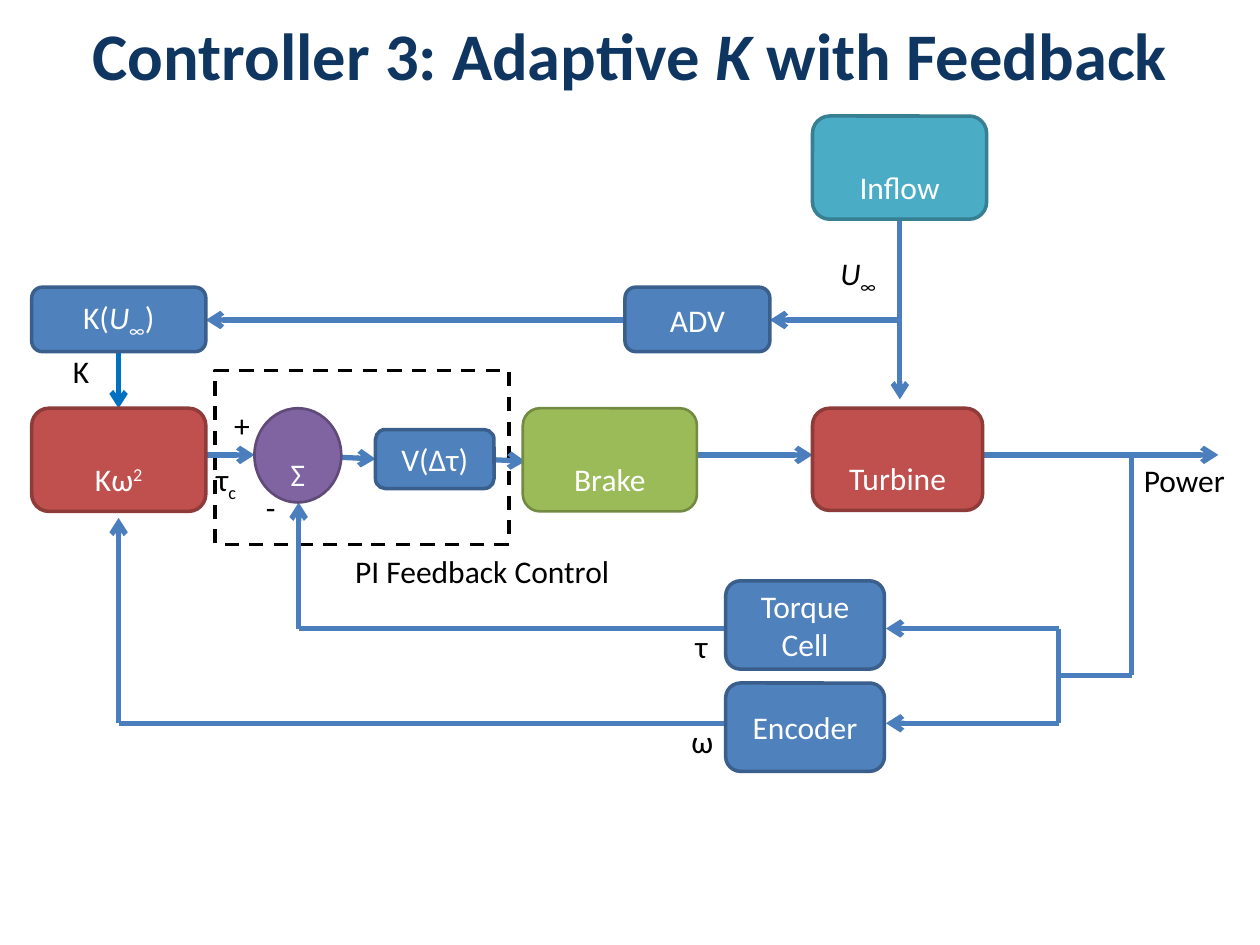
from pptx import Presentation
from pptx.util import Cm, Pt
from pptx.dml.color import RGBColor
from pptx.enum.dml import MSO_LINE
from pptx.enum.shapes import MSO_CONNECTOR, MSO_SHAPE
from pptx.enum.text import MSO_ANCHOR, MSO_AUTO_SIZE, PP_ALIGN
from lxml.etree import SubElement
from pptx.oxml.ns import qn

# Theme: name -> colour, (fill, edge, edge width) or type size
THEME = {
    "font": "Calibri", "big": 38, "text": 18, "wire": 3,
    "title": "0F3661", "ink": "000000", "paper": "FFFFFF",
    "line": "4B7EBC", "gain": "0070C0",
    "blue": ("4F81BD", "3A5F8C", 2), "red": ("C0504D", "8E3B39", 2),
    "green": ("9BBB59", "738A42", 1.5), "teal": ("4BACC6", "377F92", 2),
    "plum": ("8064A2", "5F4A78", 1.5),
}
SHIFT = {"sub": "-25000", "sup": "30000"}

# Content: text is a list of (words, style) runs; lengths are in cm
TITLE = [("Controller 3: Adaptive ", ""), ("K ", "i"), ("with Feedback", "")]
FRAME = (4.34, 7.47, 5.92, 3.51)

ROUND, OVAL = MSO_SHAPE.ROUNDED_RECTANGLE, MSO_SHAPE.OVAL
# text, left, top, width, height, look, line spacing, outline
BOXES = [
    ([("Inflow", "")], 16.38, 2.34, 3.51, 2.08, "teal", 2, ROUND),
    ([("K(", ""), ("U", "i"), ("∞", "sub"), (")", "")],
     0.64, 5.79, 3.51, 1.3, "blue", 1, ROUND),
    ([("ADV", "")], 12.6, 5.79, 2.92, 1.3, "blue", 1, ROUND),
    ([("Kω", ""), ("2", "sup")], 0.64, 8.23, 3.51, 2.08, "red", 2, ROUND),
    ([("Σ", "")], 5.13, 8.23, 1.75, 1.9, "plum", 2, OVAL),
    ([("V(Δτ)", "")], 7.57, 8.66, 2.39, 1.19, "blue", 1, ROUND),
    ([("Brake", "")], 10.54, 8.23, 3.51, 2.08, "green", 2, ROUND),
    ([("Turbine", "")], 16.38, 8.23, 3.43, 2.06, "red", 2, ROUND),
    ([("Torque Cell", "")], 14.63, 11.71, 3.2, 1.78, "blue", 1, ROUND),
    ([("Encoder", "")], 14.63, 13.77, 3.2, 1.78, "blue", 1, ROUND),
]

# text, left, top, width
LABELS = [
    ([("PI Feedback Control", "")], 6.91, 11, 5.72),
    ([("τ", ""), ("c", "sub")], 4.11, 9.19, 1.75),
    ([("τ", "")], 13.77, 12.52, 1.75),
    ([("ω", "")], 13.69, 14.43, 1.75),
    ([("Power", "")], 22.81, 9.17, 2.39),
    ([("U", "i"), ("∞", "sub")], 16.69, 5.05, 2.34),
    ([("K", "")], 1.22, 6.96, 1.75),
    ([("-", "")], 5.11, 9.7, 1.75),
    ([("+", "")], 4.47, 8.05, 1.75),
]

# Rails the wires run on: columns, then rows
GAIN, SUM, FLOW, FORK, TAP = 2.39, 6.02, 18.14, 21.34, 22.81
WIND, MAIN, TORQ, SPLIT, SPEED = 6.45, 9.17, 12.67, 13.61, 14.58
CELL, EDGE = 14.63, 17.86  # left and right side of the sensors

# start x, start y, end x, end y
ARROWS = [
    (4.15, MAIN, 5.13, MAIN),
    (6.88, 9.22, 7.57, 9.25),
    (10, 9.27, 10.59, 9.3),
    (14.05, MAIN, 16.38, MAIN),
    (18.44, MAIN, 24.56, MAIN),
    (FLOW, 4.24, FLOW, 8.05),
    (FLOW, WIND, 15.52, WIND),
    (12.6, WIND, 4.15, WIND),
    (FORK, TORQ, EDGE, TORQ),
    (FORK, SPEED, EDGE, SPEED),
    (SUM, TORQ, SUM, 10.13),
    (GAIN, SPEED, GAIN, 10.44),
]
WIRES = [
    (SUM, TORQ, CELL, TORQ),
    (GAIN, SPEED, CELL, SPEED),
    (TAP, MAIN, TAP, SPLIT),
    (FORK, SPLIT, TAP, SPLIT),
    (FORK, TORQ, FORK, SPEED),
]


def write(frame, runs, size="text", ink="ink", bold=False, gap=1, after=0,
          align=PP_ALIGN.LEFT, anchor=MSO_ANCHOR.MIDDLE):
    frame.word_wrap = True
    frame.vertical_anchor = anchor
    para = frame.paragraphs[0]
    para.alignment = align
    para.line_spacing = gap
    para.space_before, para.space_after = Pt(0), Pt(after)
    for words, style in runs:
        run = para.add_run()
        run.text = words
        font = run.font
        font.name, font.size = THEME["font"], Pt(THEME[size])
        font.bold, font.italic = bold, style == "i"
        font.color.rgb = RGBColor.from_string(THEME[ink])
        if style in SHIFT:
            run._r.get_or_add_rPr().set("baseline", SHIFT[style])


def shape(page, kind, place, fill, edge, width):
    item = page.shapes.add_shape(kind, *map(Cm, place))
    item.shadow.inherit = False
    item.fill.solid()
    item.fill.fore_color.rgb = RGBColor.from_string(fill)
    item.line.color.rgb = RGBColor.from_string(edge)
    item.line.width = Pt(width)
    return item


def wire(page, ends, ink="line", head=False):
    item = page.shapes.add_connector(MSO_CONNECTOR.STRAIGHT, *map(Cm, ends))
    item.line.color.rgb = RGBColor.from_string(THEME[ink])
    item.line.width = Pt(THEME["wire"])
    if head:
        SubElement(item.line._get_or_add_ln(), qn("a:tailEnd"), type="arrow")
    SubElement(item._element.spPr, qn("a:effectLst"))


def main():
    deck = Presentation()
    deck.slide_width, deck.slide_height = Cm(25.4), Cm(19.05)
    page = deck.slides.add_slide(deck.slide_layouts[5])

    # Title
    title = page.shapes.title
    title.left, title.top, title.width, title.height = map(
        Cm, (0, 0.28, 25.4, 1.63))
    frame = title.text_frame
    frame.auto_size = MSO_AUTO_SIZE.NONE
    frame.margin_left = frame.margin_right = 0
    frame.margin_top = frame.margin_bottom = 0
    write(frame, TITLE, size="big", ink="title", bold=True,
          align=PP_ALIGN.CENTER, anchor=MSO_ANCHOR.TOP)

    # Dashed frame of the feedback loop
    loop = shape(page, MSO_SHAPE.RECTANGLE, FRAME,
                 THEME["paper"], THEME["ink"], 2)
    loop.line.dash_style = MSO_LINE.DASH

    # Wires and arrows
    for ends in WIRES:
        wire(page, ends)
    for ends in ARROWS:
        wire(page, ends, head=True)
    wire(page, (GAIN, 6.96, GAIN, 8.23), ink="gain", head=True)

    # Blocks
    for runs, *place, look, gap, kind in BOXES:
        box = shape(page, kind, place, *THEME[look])
        write(box.text_frame, runs, ink="paper", gap=gap, after=10,
              align=PP_ALIGN.CENTER)

    # Signal labels
    for runs, left, top, width in LABELS:
        note = page.shapes.add_textbox(Cm(left), Cm(top), Cm(width), Cm(1.02))
        write(note.text_frame, runs)

    deck.save("out.pptx")


if __name__ == "__main__":
    main()
